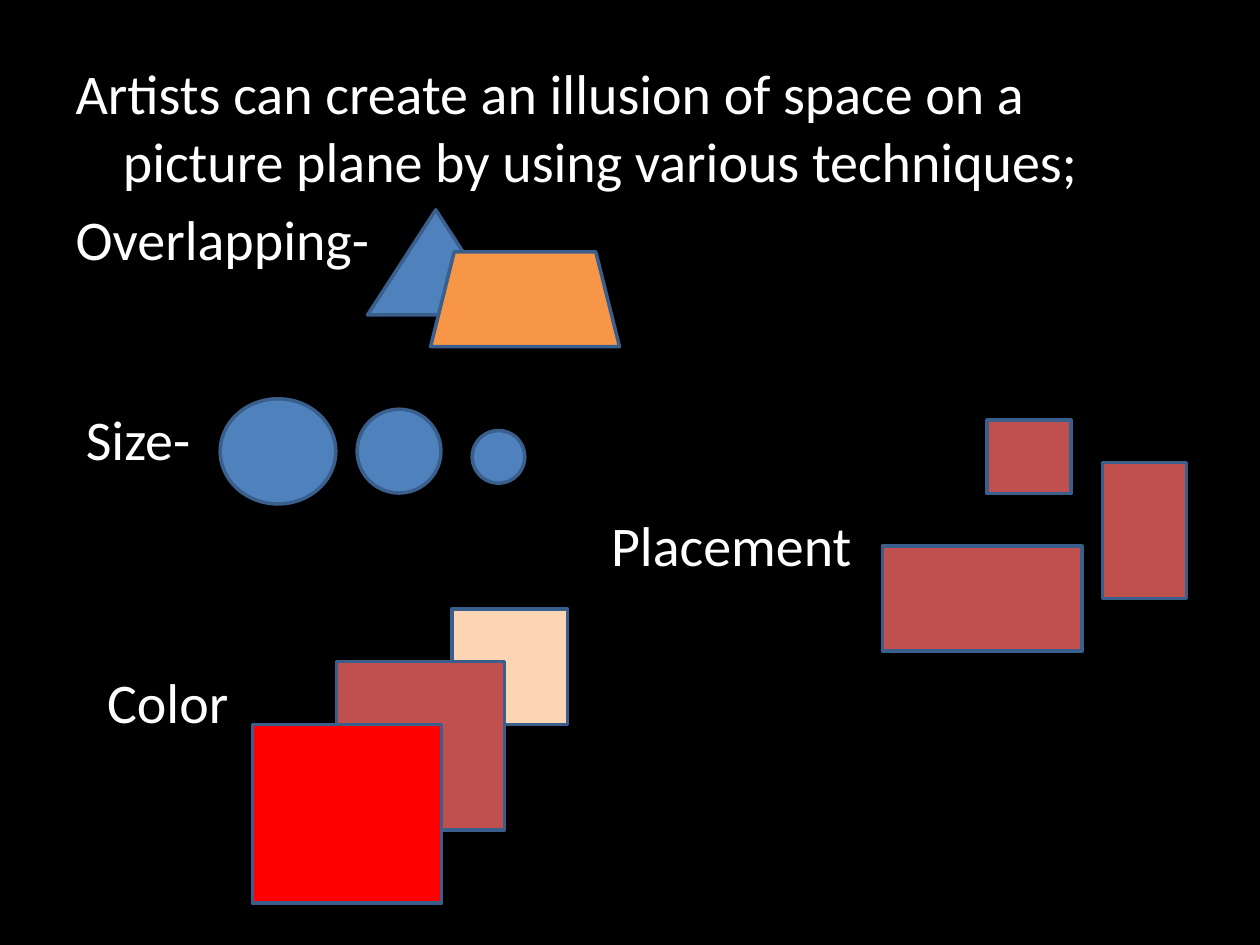
from pptx import Presentation
from pptx.dml.color import RGBColor
from pptx.enum.shapes import MSO_SHAPE
from pptx.enum.text import MSO_AUTO_SIZE
from pptx.util import Cm, Pt

RECTANGLE = MSO_SHAPE.RECTANGLE
OVAL = MSO_SHAPE.OVAL
TRIANGLE = MSO_SHAPE.ISOSCELES_TRIANGLE
TRAPEZOID = MSO_SHAPE.TRAPEZOID
NO_AUTOFIT = MSO_AUTO_SIZE.NONE
FIT_SHAPE = MSO_AUTO_SIZE.SHAPE_TO_FIT_TEXT

BLACK, WHITE = "000000", "FFFFFF"
BLUE, OUTLINE = "4F81BD", "3A5F8C"
ORANGE, PEACH = "F79646", "FCD5B5"
BRICK, RED = "C0504D", "FF0000"
LABEL_HEIGHT = 1.63


def color(hex_value):
    return RGBColor.from_string(hex_value)


def format_text(text_frame):
    for paragraph in text_frame.paragraphs:
        for run in paragraph.runs:
            run.font.name = "Calibri"
            run.font.size = Pt(32)
            run.font.color.rgb = color(WHITE)


def add_label(slide, text, left, top, width):
    label = slide.shapes.add_textbox(Cm(left), Cm(top), Cm(width), Cm(LABEL_HEIGHT))
    text_frame = label.text_frame
    text_frame.word_wrap = True
    text_frame.auto_size = FIT_SHAPE
    text_frame.text = text
    format_text(text_frame)


def add_figure(slide, kind, left, top, width, height, fill):
    shape = slide.shapes.add_shape(kind, Cm(left), Cm(top), Cm(width), Cm(height))
    shape.shadow.inherit = False
    shape.fill.solid()
    shape.fill.fore_color.rgb = color(fill)
    shape.line.color.rgb = color(OUTLINE)
    shape.line.width = Pt(2)


def fill_body(slide, left, top, width, height):
    body = slide.placeholders[1]
    body.left, body.top, body.width, body.height = map(Cm, (left, top, width, height))
    text_frame = body.text_frame
    text_frame.auto_size = NO_AUTOFIT
    text_frame.text = (
        "Artists can create an illusion of space on a picture plane "
        "by using various techniques;\nOverlapping-"
    )
    format_text(text_frame)
    # Hanging indent comes from the layout; only the bullet is switched off
    for paragraph in text_frame.paragraphs:
        properties = paragraph._p.get_or_add_pPr()
        properties.append(properties.makeelement(
            "{http://schemas.openxmlformats.org/drawingml/2006/main}buNone", {}))


def add_overlapping(slide, left, top):
    add_figure(slide, TRIANGLE, left, top, 2.75, 2.12, BLUE)
    add_figure(slide, TRAPEZOID, left + 1.27, top + 0.85, 3.81, 1.91, ORANGE)


def add_size(slide, left, top):
    add_label(slide, "Size-", left, top, 7.41)
    for x, y, width, height in (
        (2.96, 0, 2.33, 2.12),
        (5.72, 0.21, 1.69, 1.69),
        (8.04, 0.64, 1.06, 1.06),
    ):
        add_figure(slide, OVAL, left + x, top + y, width, height, BLUE)


def add_placement(slide, left, top):
    add_label(slide, "Placement", left, top + 1.69, 5.72)
    for x, y, width, height in (
        (5.72, 2.54, 4.02, 2.12),
        (10.16, 0.85, 1.69, 2.75),
        (7.83, 0, 1.69, 1.48),
    ):
        add_figure(slide, RECTANGLE, left + x, top + y, width, height, BRICK)


def add_color(slide, left, top):
    add_label(slide, "Color", left, top + 1.06, 6.35)
    # From the pale far square to the bright near one
    for x, y, width, height, fill in (
        (7.2, 0, 2.33, 2.33, PEACH),
        (4.87, 1.06, 3.39, 3.39, BRICK),
        (3.18, 2.33, 3.81, 3.6, RED),
    ):
        add_figure(slide, RECTANGLE, left + x, top + y, width, height, fill)


def main():
    presentation = Presentation()
    presentation.slide_width = Cm(25.4)
    presentation.slide_height = Cm(19.05)

    # Title and content layout, used for its body only
    slide = presentation.slides.add_slide(presentation.slide_layouts[1])
    title = slide.shapes.title.element
    title.getparent().remove(title)
    slide.background.fill.solid()
    slide.background.fill.fore_color.rgb = color(BLACK)

    fill_body(slide, 1.27, 1.06, 22.86, 5.72)
    add_overlapping(slide, 7.41, 4.23)
    add_size(slide, 1.48, 8.04)
    add_placement(slide, 12.07, 8.47)
    add_color(slide, 1.91, 12.28)
    presentation.save("out.pptx")


if __name__ == "__main__":
    main()
